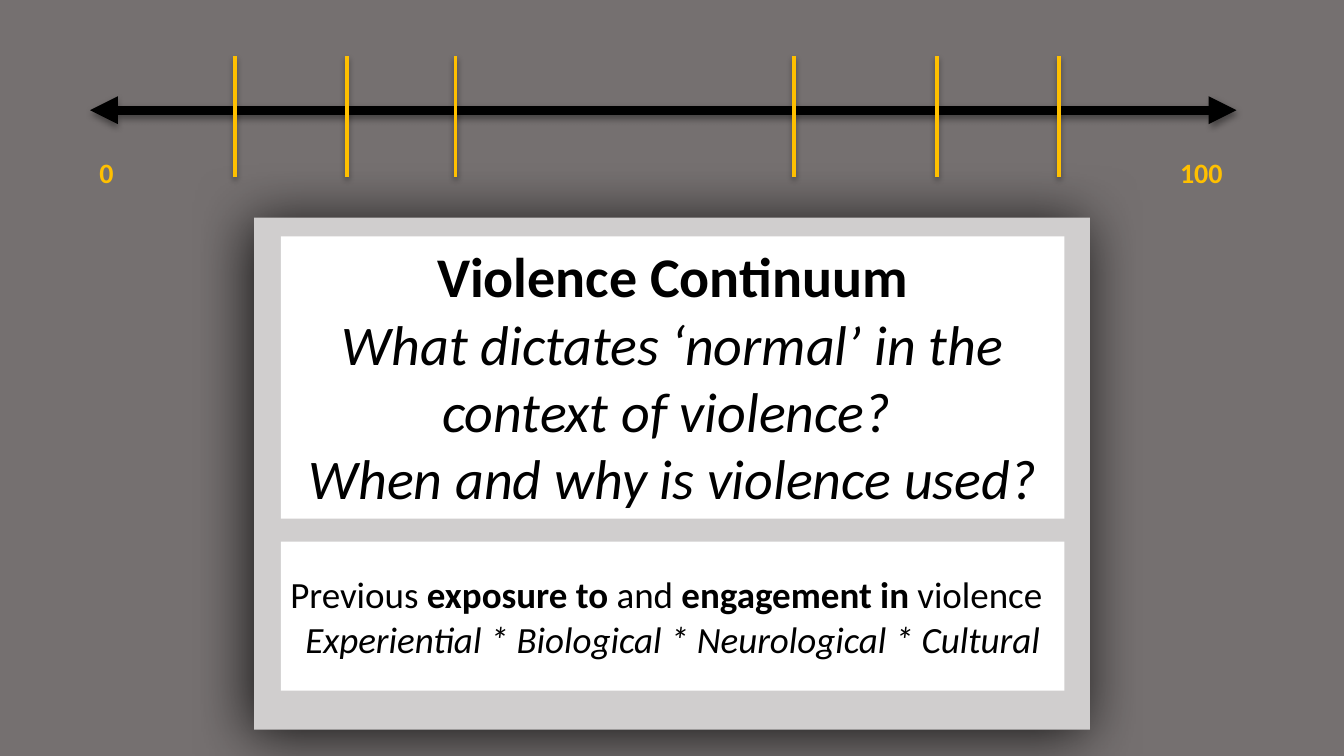
from lxml.etree import SubElement
from pptx import Presentation
from pptx.dml.color import RGBColor
from pptx.enum.shapes import MSO_CONNECTOR, MSO_SHAPE
from pptx.enum.text import MSO_ANCHOR, MSO_AUTO_SIZE, PP_ALIGN
from pptx.oxml.ns import qn
from pptx.util import Inches, Pt

COLORS = {"back": "757070", "panel": "D0CECE", "card": "FFFFFF",
          "ink": "000000", "gold": "FFC000"}
GLOW = {"blur": 32, "dist": 3, "angle": 135, "alpha": 81}
SOFT = {"blur": 3.1, "dist": 1.6, "angle": 90, "alpha": 38}
TICKS = [1.75, 2.58, 3.39, 5.91, 6.97, 7.88]
BOLD = {"bold": True}
SLANT = {"italic": True}


def color(name):
    return RGBColor.from_string(COLORS[name])


def apply(target, values):
    for key, value in values.items():
        setattr(target, key, value)


def place(shape, box):
    sides = ("left", "top", "width", "height")
    apply(shape, {side: Inches(size) for side, size in zip(sides, box)})


def paint(shape, name):
    shape.fill.solid()
    shape.fill.fore_color.rgb = color(name)
    shape.line.fill.background()


def shade(shape, blur, dist, angle, alpha):
    props = shape.element.spPr
    for old in props.findall(qn("a:effectLst")):
        props.remove(old)
    group = SubElement(props, qn("a:effectLst"))
    drop = SubElement(group, qn("a:outerShdw"), blurRad=str(Pt(blur)),
                      dist=str(Pt(dist)), dir=str(angle * 60000),
                      algn="ctr", rotWithShape="0")
    tint = SubElement(drop, qn("a:srgbClr"), val=COLORS["ink"])
    SubElement(tint, qn("a:alpha"), val=str(alpha * 1000))


def add_rect(slide, box, name):
    rect = slide.shapes.add_shape(MSO_SHAPE.RECTANGLE, *map(Inches, box))
    rect.shadow.inherit = False
    paint(rect, name)
    return rect


def add_line(slide, start, end, name, width, heads=()):
    line = slide.shapes.add_connector(MSO_CONNECTOR.STRAIGHT,
                                      *map(Inches, start + end))
    line.line.color.rgb = color(name)
    line.line.width = Pt(width)
    for head in heads:
        SubElement(line.element.spPr.find(qn("a:ln")), qn(head), type="triangle")
    shade(line, **SOFT)


def write(shape, lines, size, name, pad, anchor):
    frame = shape.text_frame
    apply(frame, {"word_wrap": True, "auto_size": MSO_AUTO_SIZE.NONE,
                  "vertical_anchor": anchor,
                  "margin_left": Inches(0.07), "margin_right": Inches(0.07),
                  "margin_top": Inches(pad), "margin_bottom": Inches(pad)})
    for index, (align, runs) in enumerate(lines):
        para = frame.add_paragraph() if index else frame.paragraphs[0]
        para.alignment = align
        for text, style in runs:
            run = para.add_run()
            run.text = text
            base = {"name": "Calibri", "size": Pt(size),
                    "bold": False, "italic": False}
            apply(run.font, {**base, **style})
            run.font.color.rgb = color(name)


def add_label(slide, text, box):
    label = slide.shapes.add_textbox(*map(Inches, box))
    write(label, [(PP_ALIGN.LEFT, [(text, BOLD)])], 15, "gold", 0.07,
          MSO_ANCHOR.TOP)


def main():
    deck = Presentation()
    apply(deck, {"slide_width": Inches(10), "slide_height": Inches(10 * 9 / 16)})
    slide = deck.slides.add_slide(deck.slide_layouts[5])
    slide.background.fill.solid()
    slide.background.fill.fore_color.rgb = color("back")

    title = slide.shapes.title
    panel = add_rect(slide, (1.89, 1.62, 6.22, 3.81), "panel")
    shade(panel, **GLOW)
    title.element.addprevious(panel.element)

    place(title, (2.09, 4.03, 5.83, 1.11))
    paint(title, "card")
    write(title, [
        (PP_ALIGN.LEFT, [("Previous ", {}), ("exposure to", BOLD), (" and ", {}),
                         ("engagement in", BOLD), (" violence", {})]),
        (PP_ALIGN.CENTER, [("Experiential * Biological * Neurological * Cultural",
                            SLANT)]),
    ], 19.8, "ink", 0.04, MSO_ANCHOR.MIDDLE)

    card = add_rect(slide, (2.09, 1.76, 5.83, 2.1), "card")
    write(card, [
        (PP_ALIGN.CENTER, [("Violence Continuum", BOLD)]),
        (PP_ALIGN.CENTER, [("What dictates ‘normal’ in the context of violence? ",
                            SLANT)]),
        (PP_ALIGN.CENTER, [("When and why is violence used?", SLANT)]),
    ], 30, "ink", 0.04, MSO_ANCHOR.TOP)

    add_line(slide, (0.67, 0.82), (9.2, 0.82), "ink", 5,
             ("a:headEnd", "a:tailEnd"))
    for tick in TICKS:
        add_line(slide, (tick, 0.42), (tick, 1.32), "gold", 2)
    add_label(slide, "0", (0.67, 1.09, 0.41, 0.4))
    add_label(slide, "100", (8.71, 1.09, 0.49, 0.4))
    deck.save("out.pptx")


if __name__ == "__main__":
    main()
